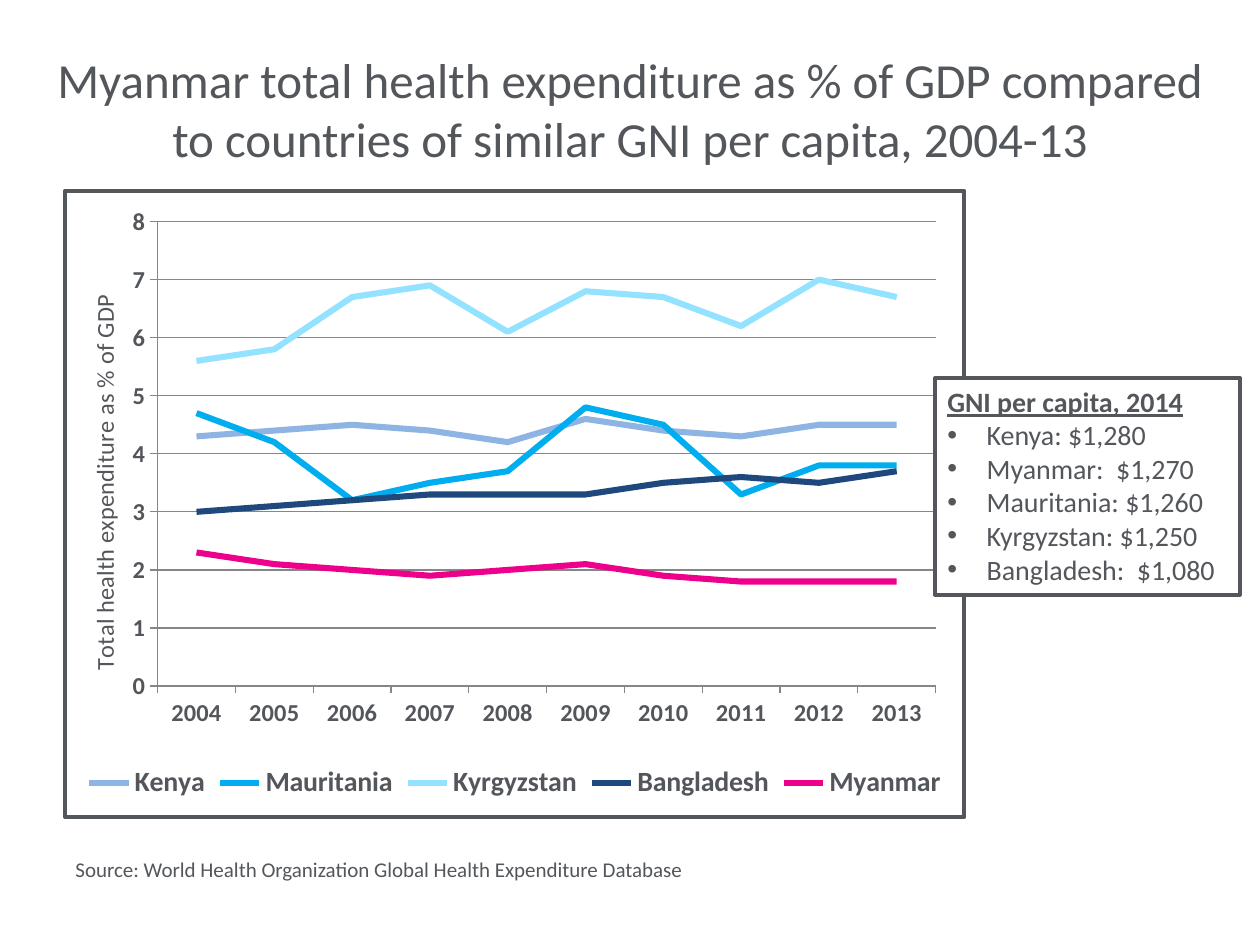
import pptx
import pptx.chart.data
import pptx.enum.chart
import pptx.enum.shapes
import pptx.enum.text
import pptx.oxml
import pptx.oxml.ns
import pptx.util
from pptx.dml.color import RGBColor

Pt = pptx.util.Pt
qn = pptx.oxml.ns.qn

# Content
FONT = "Calibri"
COLORS = {
    "text": "53565A", "white": "FFFFFF", "grid": "868686",
    "Kenya": "8EB4E3", "Mauritania": "00AEEF", "Kyrgyzstan": "93E2FF",
    "Bangladesh": "1F497D", "Myanmar": "EC008C",
}
TITLE = ("Myanmar total health expenditure as % of GDP compared "
         "to countries of similar GNI per capita, 2004-13")
SOURCE = "Source: World Health Organization Global Health Expenditure Database"
AXIS_TITLE = "Total health expenditure as % of GDP"
INCOME_HEADING = "GNI per capita, 2014"
INCOMES = ["Kenya: $1,280", "Myanmar:  $1,270", "Mauritania: $1,260",
           "Kyrgyzstan: $1,250", "Bangladesh:  $1,080"]
YEARS = [str(year) for year in range(2004, 2014)]
SPENDING = {
    "Kenya": (4.3, 4.4, 4.5, 4.4, 4.2, 4.6, 4.4, 4.3, 4.5, 4.5),
    "Mauritania": (4.7, 4.2, 3.2, 3.5, 3.7, 4.8, 4.5, 3.3, 3.8, 3.8),
    "Kyrgyzstan": (5.6, 5.8, 6.7, 6.9, 6.1, 6.8, 6.7, 6.2, 7, 6.7),
    "Bangladesh": (3, 3.1, 3.2, 3.3, 3.3, 3.3, 3.5, 3.6, 3.5, 3.7),
    "Myanmar": (2.3, 2.1, 2, 1.9, 2, 2.1, 1.9, 1.8, 1.8, 1.8),
}

# Places: left, top, width, height in points
TITLE_AREA = (18, 21.6, 684, 80.64)
CHART_AREA = (36, 108, 516.24, 360)
INCOME_AREA = (534.24, 216, 174.24, 123.84)
SOURCE_AREA = (36, 486, 365.76, 21.6)
# Places within the chart, as fractions of its size
PLOT_LAYOUT = {"x": 0.103, "y": 0.049, "w": 0.865, "h": 0.742}
LEGEND_LAYOUT = {"x": 0.01, "y": 0.9, "w": 0.98, "h": 0.09}
AXIS_TITLE_LAYOUT = {"x": 0.02, "y": 0.16}


def color(name):
    return RGBColor.from_string(COLORS[name])


def set_font(font, size, bold=False, underline=None):
    font.name, font.size, font.bold = FONT, Pt(size), bold
    font.color.rgb = color("text")
    if underline is not None:
        font.underline = underline


def write(frame, text, size=16, bold=False, underline=None, align=None,
          bullet=False, first=False):
    """Add one formatted paragraph to a text frame."""
    para = frame.paragraphs[0] if first else frame.add_paragraph()
    para.alignment = align
    if bullet:
        props = para._p.get_or_add_pPr()
        props.set("marL", str(Pt(22.5)))
        props.set("indent", str(Pt(-22.5)))
        for tag, attr, value in (("buFont", "typeface", "Arial"),
                                 ("buChar", "char", "•")):
            props.append(element("a:" + tag, **{attr: value}))
    span = para.add_run()
    span.text = text
    set_font(span.font, size, bold, underline)


def element(tag, **attributes):
    node = pptx.oxml.parse_xml(f"<{tag} {pptx.oxml.ns.nsdecls('a', 'c')}/>")
    for name, value in attributes.items():
        node.set(name, str(value))
    return node


def place(parent, fractions, after=None, inner=False):
    """Give a chart part a manual layout."""
    for old in parent.findall(qn("c:layout")):
        parent.remove(old)
    layout, manual = element("c:layout"), element("c:manualLayout")
    layout.append(manual)
    if inner:
        manual.append(element("c:layoutTarget", val="inner"))
    for key in "xy":
        manual.append(element(f"c:{key}Mode", val="edge"))
    for key, value in fractions.items():
        manual.append(element("c:" + key, val=value))
    if after is None:
        parent.insert(0, layout)
    else:
        parent.find(qn(after)).addnext(layout)


def add_text_box(page, area, anchor):
    box = page.shapes.add_textbox(*map(Pt, area))
    box.text_frame.word_wrap = True
    box.text_frame.vertical_anchor = anchor
    return box.text_frame


def add_spending_chart(page):
    data = pptx.chart.data.CategoryChartData(number_format="0.0")
    data.categories = YEARS
    for country, values in SPENDING.items():
        data.add_series(country, values)
    chart = page.shapes.add_chart(pptx.enum.chart.XL_CHART_TYPE.LINE,
                                  *map(Pt, CHART_AREA), data).chart
    set_font(chart.font, 10)
    chart.has_title = False
    chart.plots[0].vary_by_categories = False
    for series in chart.plots[0].series:
        series.smooth = False
        series.format.line.width = Pt(3.5)
        series.format.line.color.rgb = color(series.name)
        series.marker.style = pptx.enum.chart.XL_MARKER_STYLE.NONE

    # Axes
    value_axis = chart.value_axis
    for axis in (chart.category_axis, value_axis):
        set_font(axis.tick_labels.font, 14, bold=True)
        axis.major_tick_mark = pptx.enum.chart.XL_TICK_MARK.OUTSIDE
        axis.format.line.color.rgb = color("grid")
        axis.format.line.width = Pt(0.75)
    value_axis.minimum_scale, value_axis.maximum_scale = 0, 8
    value_axis.major_unit = 1
    value_axis.tick_labels.number_format = "#,##0"
    value_axis.tick_labels.number_format_is_linked = False
    value_axis.has_major_gridlines = True
    value_axis.major_gridlines.format.line.color.rgb = color("grid")
    value_axis.major_gridlines.format.line.width = Pt(0.75)
    axis_title = value_axis.axis_title
    write(axis_title.text_frame, AXIS_TITLE, size=14, first=True)
    body = axis_title.text_frame._txBody.find(qn("a:bodyPr"))
    body.set("rot", "-5400000")
    body.set("vert", "horz")
    place(axis_title._element, AXIS_TITLE_LAYOUT, after="c:tx")

    # Legend and plot area
    chart.has_legend = True
    chart.legend.position = pptx.enum.chart.XL_LEGEND_POSITION.RIGHT
    chart.legend.include_in_layout = False
    set_font(chart.legend.font, 16, bold=True)
    place(chart.legend._element, LEGEND_LAYOUT, after="c:legendPos")
    space = chart._chartSpace
    place(space.chart.plotArea, PLOT_LAYOUT, inner=True)

    # Border
    border = pptx.oxml.parse_xml(
        f'<c:spPr {pptx.oxml.ns.nsdecls("a", "c")}><a:noFill/>'
        f'<a:ln w="{Pt(2.25)}"><a:solidFill><a:srgbClr val="{COLORS["text"]}"/>'
        '</a:solidFill></a:ln></c:spPr>')
    space.find(qn("c:chart")).addnext(border)


def add_income_box(page):
    box = page.shapes.add_shape(pptx.enum.shapes.MSO_SHAPE.RECTANGLE,
                                *map(Pt, INCOME_AREA))
    box.shadow.inherit = False
    box.fill.solid()
    box.fill.fore_color.rgb = color("white")
    box.line.color.rgb = color("text")
    box.line.width = Pt(2.25)
    frame = box.text_frame
    frame.word_wrap = True
    frame.vertical_anchor = pptx.enum.text.MSO_ANCHOR.TOP
    left = pptx.enum.text.PP_ALIGN.LEFT
    write(frame, INCOME_HEADING, bold=True, underline=True, align=left, first=True)
    for income in INCOMES:
        write(frame, income, align=left, bullet=True)


def main():
    deck = pptx.Presentation()
    deck.slide_width, deck.slide_height = Pt(720), Pt(540)
    page = deck.slides.add_slide(deck.slide_layouts[6])
    anchor = pptx.enum.text.MSO_ANCHOR
    write(add_text_box(page, TITLE_AREA, anchor.MIDDLE), TITLE, size=28,
          align=pptx.enum.text.PP_ALIGN.CENTER, first=True)
    add_spending_chart(page)
    add_income_box(page)
    write(add_text_box(page, SOURCE_AREA, anchor.TOP), SOURCE, size=12, first=True)
    deck.save("out.pptx")


if __name__ == "__main__":
    main()
